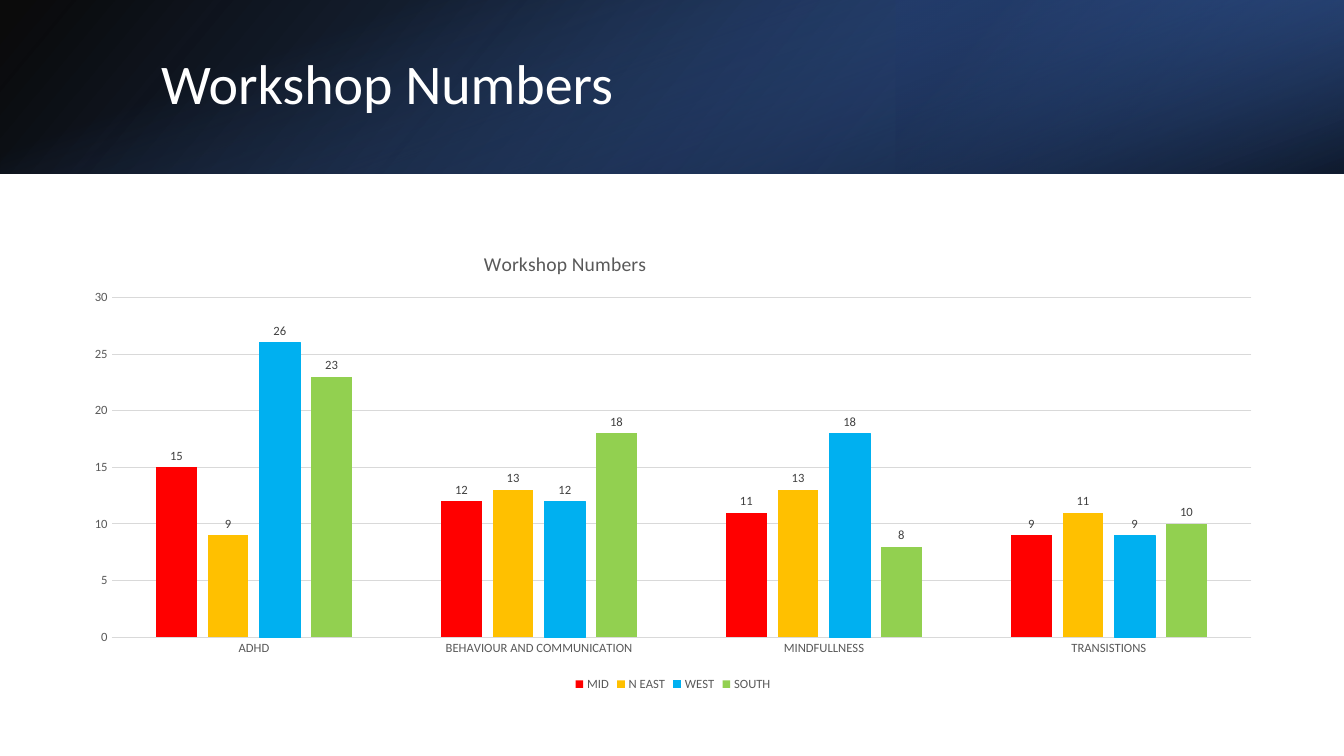
from pptx import Presentation
from pptx.chart.data import CategoryChartData
from pptx.dml.color import RGBColor
from pptx.enum.chart import XL_CHART_TYPE as ChartType, XL_LABEL_POSITION as LabelPosition
from pptx.enum.chart import XL_LEGEND_POSITION as LegendPosition, XL_TICK_MARK as TickMark
from pptx.enum.shapes import MSO_SHAPE as Shape
from pptx.enum.text import MSO_ANCHOR as Anchor
from pptx.oxml import parse_xml
from pptx.oxml.ns import nsdecls, qn
from pptx.util import Inches, Pt
from lxml.etree import SubElement

COLORS = {
    "black": "000000", "white": "FFFFFF", "navy": "203864", "blue": "2F5597",
    "sky": "4472C4", "axis": "595959", "label": "404040", "grid": "D9D9D9",
    "red": "FF0000", "amber": "FFC000", "cyan": "00B0F0", "green": "92D050",
}
CATEGORIES = ["ADHD", "BEHAVIOUR AND COMMUNICATION", "MINDFULLNESS", "TRANSISTIONS"]
REGIONS = [
    ("MID", "red", (15, 12, 11, 9)),
    ("N EAST", "amber", (9, 13, 13, 11)),
    ("WEST", "cyan", (26, 12, 18, 9)),
    ("SOUTH", "green", (23, 18, 8, 10)),
]
HEADING = "Workshop Numbers"
BANNER_ROWS = 22.95


def rgb(name):
    return RGBColor.from_string(COLORS[name])


class SlideBuilder:
    """Places elements on a grid of 100 columns by 100 rows."""

    font_name = "Calibri"

    def __init__(self, presentation):
        self.width = presentation.slide_width
        self.height = presentation.slide_height
        self.slide = presentation.slides.add_slide(presentation.slide_layouts[6])

    def box(self, column, row, columns, rows):
        return (int(column * self.width / 100), int(row * self.height / 100),
                int(columns * self.width / 100), int(rows * self.height / 100))

    def style(self, font, size, color):
        font.name, font.size, font.bold = self.font_name, Pt(size), False
        font.color.rgb = rgb(color)

    def banner(self, column, columns, stops, angle, rotation=0, flip=False):
        """Gradient band at the top; stops are (position, color, opacity) in percent."""
        left, top, width, height = self.box(column, 0, columns, BANNER_ROWS)
        if rotation == 90:
            left, top = left + (width - height) // 2, top + (height - width) // 2
            width, height = height, width
        shape = self.slide.shapes.add_shape(Shape.RECTANGLE, left, top, width, height)
        shape.shadow.inherit = False
        shape.rotation = rotation
        if flip:
            shape._element.spPr.xfrm.set("flipH", "1")
        shape.line.fill.background()
        shape.fill.gradient()
        shape.fill.gradient_angle = 360 - angle
        for stop, (position, color, _) in zip(shape.fill.gradient_stops, stops):
            stop.position = position / 100
            stop.color.rgb = rgb(color)
        for color, (_, _, opacity) in zip(shape._element.spPr.iter(qn("a:srgbClr")), stops):
            SubElement(color, qn("a:alpha")).set("val", str(opacity * 1000))

    def title(self, text, *cells):
        frame = self.slide.shapes.add_textbox(*self.box(*cells)).text_frame
        frame.word_wrap = True
        frame.vertical_anchor = Anchor.MIDDLE
        paragraph = frame.paragraphs[0]
        paragraph.line_spacing = 0.9
        run = paragraph.add_run()
        run.text = text
        self.style(run.font, 40, "white")

    def column_chart(self, heading, categories, regions, *cells):
        data = CategoryChartData()
        data.categories = categories
        for name, _, values in regions:
            data.add_series(name, values)
        chart = self.slide.shapes.add_chart(
            ChartType.COLUMN_CLUSTERED, *self.box(*cells), data).chart
        self.style(chart.font, 10, "black")
        chart.has_title = True
        run = chart.chart_title.text_frame.paragraphs[0].add_run()
        run.text = heading
        self.style(run.font, 14, "axis")
        self.place(chart.chart_title._element, x=0.34, y=0.03)
        self.place(chart._chartSpace.chart.plotArea, "inner", x=0.034, y=0.14, w=0.946, h=0.734)

        chart.has_legend = True
        chart.legend.position = LegendPosition.BOTTOM
        chart.legend.include_in_layout = False
        self.style(chart.legend.font, 9, "axis")
        for axis in (chart.category_axis, chart.value_axis):
            axis.major_tick_mark = axis.minor_tick_mark = TickMark.NONE
            self.style(axis.tick_labels.font, 9, "axis")
        values = chart.value_axis
        values.minimum_scale, values.maximum_scale, values.major_unit = 0, 30, 5
        values.format.line.fill.background()
        for line in (chart.category_axis.format.line, values.major_gridlines.format.line):
            line.color.rgb = rgb("grid")
            line.width = Pt(0.75)

        plot = chart.plots[0]
        plot.gap_width, plot.overlap, plot.vary_by_categories = 219, -27, False
        for series, (_, color, _) in zip(plot.series, regions):
            series.format.fill.solid()
            series.format.fill.fore_color.rgb = rgb(color)
            if color == "cyan":
                series.format.line.color.rgb = rgb(color)
                series.format.line.width = Pt(0.75)
            labels = series.data_labels
            labels.show_value = True
            labels.position = LabelPosition.OUTSIDE_END
            self.style(labels.font, 9, "label")

    @staticmethod
    def place(element, target=None, **shares):
        """Fix a chart part at shares of the chart's size."""
        for old in element.findall(qn("c:layout")):
            element.remove(old)
        layout = parse_xml(f"<c:layout {nsdecls('c')}><c:manualLayout/></c:layout>")
        settings = {"layoutTarget": target} if target else {}
        settings.update(xMode="edge", yMode="edge", **shares)
        for name, value in settings.items():
            SubElement(layout[0], qn(f"c:{name}")).set("val", str(value))
        text = element.find(qn("c:tx"))
        element.insert(0 if text is None else 1, layout)


def main():
    presentation = Presentation()
    presentation.slide_width, presentation.slide_height = Inches(13.33), Inches(7.5)
    builder = SlideBuilder(presentation)
    builder.banner(0, 100, [(0, "black", 96), (100, "blue", 100)], 140, flip=True)
    builder.banner(66.67, 33.33, [(19, "navy", 68), (100, "sky", 79)], 320,
                   rotation=180, flip=True)
    builder.banner(0, 100, [(23, "sky", 0), (99, "black", 74)], 340, rotation=90)
    builder.title(HEADING, 11.25, 5, 82.37, 12.8)
    builder.column_chart(HEADING, CATEGORIES, REGIONS, 5.25, 30.8, 89.65, 61.2)
    presentation.save("out.pptx")


if __name__ == "__main__":
    main()
